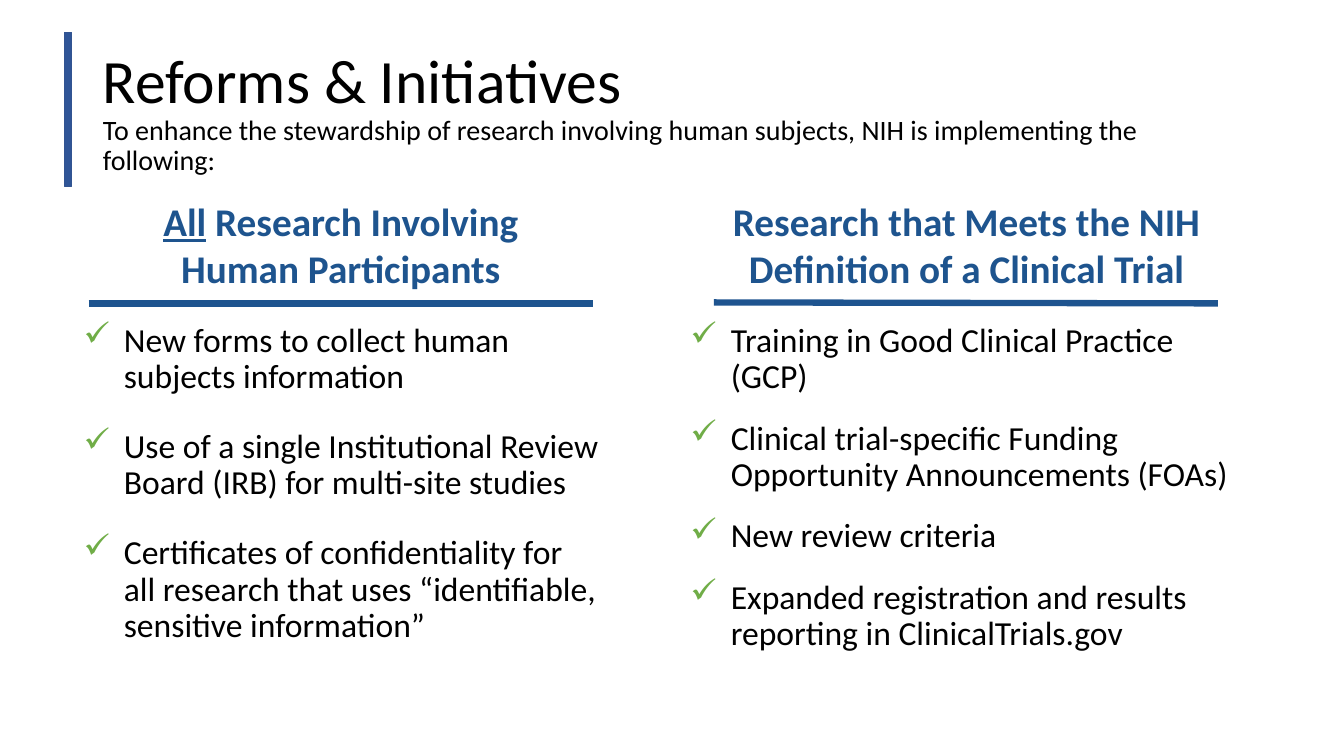
from lxml.etree import SubElement
from pptx import Presentation
from pptx.dml.color import RGBColor
from pptx.enum.shapes import MSO_CONNECTOR as CONN, MSO_SHAPE as SHAPE
from pptx.enum.text import MSO_ANCHOR as ANCHOR, MSO_AUTO_SIZE as AUTO, PP_ALIGN as ALIGN
from pptx.oxml.ns import qn
from pptx.util import Emu, Pt

PX = 9144
BLUE = "1E548E"
RULE_BLUE = "1E548F"
GREEN = "70AD47"
BLACK = "000000"


def px(*values):
    return [Emu(v * PX) for v in values]


def rgb(value):
    return RGBColor.from_string(value)


def style(font, size, color, bold=False):
    font.name = "Calibri"
    font.size = Pt(size)
    font.bold = bold
    font.color.rgb = rgb(color)


def add_bar(s, box):
    sp = s.shapes.add_shape(SHAPE.RECTANGLE, *px(*box))
    sp.shadow.inherit = False
    sp.fill.solid()
    sp.fill.fore_color.rgb = rgb("2F5597")
    sp.line.color.rgb = rgb("325491")
    sp.line.width = Pt(1)


def set_title(s, box, title, subtitle):
    sp = s.shapes.title
    sp.left, sp.top, sp.width, sp.height = px(*box)
    tf = sp.text_frame
    tf.text = f"{title}\v{subtitle}"
    tf.word_wrap = True
    tf.auto_size = AUTO.NONE
    tf.vertical_anchor = ANCHOR.MIDDLE
    p = tf.paragraphs[0]
    p.alignment = ALIGN.LEFT
    p.line_spacing = 0.9
    for r, size in zip(p.runs, (44, 20)):
        style(r.font, size, BLACK)


def add_text(s, box):
    tf = s.shapes.add_textbox(*px(*box)).text_frame
    tf.word_wrap = True
    return tf


def add_heading(s, box, underlined, rest):
    tf = add_text(s, box)
    tf.auto_size = AUTO.SHAPE_TO_FIT_TEXT
    p = tf.paragraphs[0]
    p.alignment = ALIGN.CENTER
    for text, underline in ((underlined, True), (rest, False)):
        if text:
            r = p.add_run()
            r.text = text
            style(r.font, 28, BLUE, bold=True)
            r.font.underline = underline


def add_rule(s, x1, y1, x2, y2):
    line = s.shapes.add_connector(CONN.STRAIGHT, *px(x1, y1, x2, y2))
    line.line.color.rgb = rgb(RULE_BLUE)
    line.line.width = Pt(4.5)
    SubElement(line._element.spPr, qn("a:effectLst"))


def add_check(p):
    pPr = p._p.get_or_add_pPr()
    pPr.set("marL", str(40 * PX))
    pPr.set("indent", str(-40 * PX))
    color = SubElement(pPr, qn("a:buClr"))
    SubElement(color, qn("a:srgbClr"), val=GREEN)
    SubElement(pPr, qn("a:buChar"), char="✓")


def add_checklist(s, box, items, gap):
    tf = add_text(s, box)
    for i, item in enumerate(items):
        p = tf.paragraphs[0] if i == 0 else tf.add_paragraph()
        p.text = item
        add_check(p)
        p.line_spacing = 0.9
        if i:
            p.space_before = Pt(gap)
        style(p.runs[0].font, 24, BLACK)


def main():
    prs = Presentation()
    prs.slide_width, prs.slide_height = px(1333, 750)
    s = prs.slides.add_slide(prs.slide_layouts[5])

    add_bar(s, (64, 32, 7, 153))
    set_title(
        s, (92, 40, 1150, 145), "Reforms & Initiatives",
        "To enhance the stewardship of research involving human subjects, "
        "NIH is implementing the following:")

    add_heading(s, (111, 191, 454, 104), "All", " Research Involving Human Participants")
    add_rule(s, 88, 301, 588, 301)
    add_checklist(s, (73, 316, 531, 354), [
        "New forms to collect human subjects information",
        "Use of a single Institutional Review Board (IRB) for multi-site studies",
        "Certificates of confidentiality for all research that uses "
        "“identifiable, sensitive information”",
    ], gap=24)

    add_heading(s, (711, 191, 495, 104), "",
                "Research that Meets the NIH Definition of a Clinical Trial")
    add_rule(s, 708, 300, 1208, 301)
    add_checklist(s, (675, 316, 567, 354), [
        "Training in Good Clinical Practice (GCP)",
        "Clinical trial-specific Funding Opportunity Announcements (FOAs)",
        "New review criteria",
        "Expanded registration and results reporting in ClinicalTrials.gov",
    ], gap=18)

    prs.save("out.pptx")


if __name__ == "__main__":
    main()
